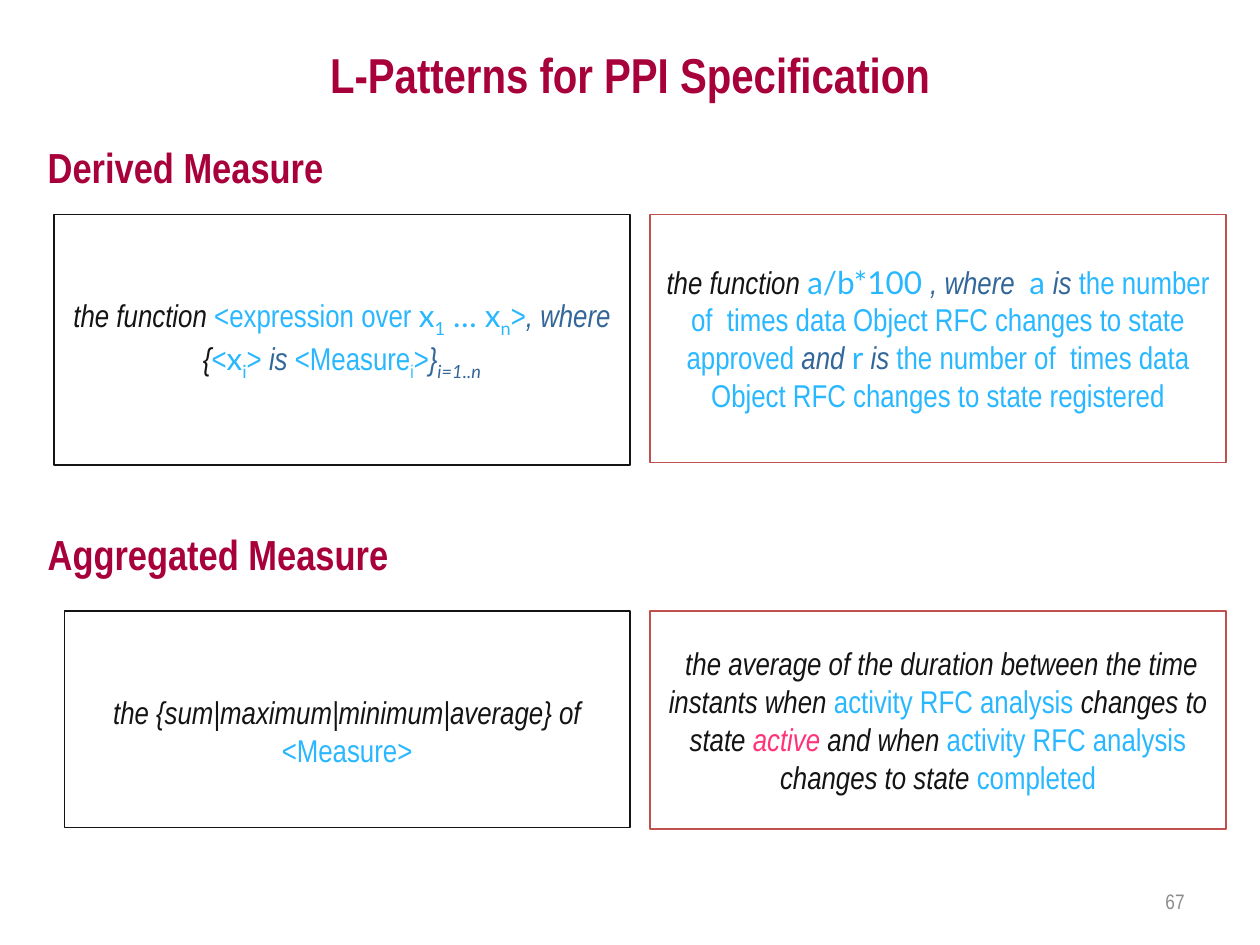
from pptx import Presentation
from pptx.dml.color import RGBColor
from pptx.enum.shapes import MSO_SHAPE as SHAPE
from pptx.enum.text import MSO_ANCHOR as ANCHOR, PP_ALIGN as ALIGN
from pptx.util import Inches, Pt

COLORS = {
    "heading": "A8003B", "ink": "141414", "value": "29B8FF", "link": "336699",
    "active": "FF327A", "frame": "C0504D", "number": "8C8C8C",
}
NARROW, LATO = "Arial Narrow", "Lato"
COLS, ROWS = 100, 75
prs = Presentation()
prs.slide_width, prs.slide_height = Inches(10), Inches(7.5)

# Run styles of the patterns
FIXED = dict(color="ink", italic=True)
LINK = dict(color="link", italic=True)
VALUE = dict(color="value")
ACTIVE = dict(color="active", italic=True)
VAR = dict(color="value", font=LATO)
VAR_SUB = dict(VAR, sub=True)
VALUE_SUB = dict(VALUE, sub=True)
RANGE_SUB = dict(LINK, font=LATO, sub=True)

DERIVED_RULE = [
    ("the function ", FIXED), ("<expression over ", VALUE), ("x", VAR),
    ("1", VAR_SUB), (" … x", VAR), ("n", VAR_SUB), (">", VALUE),
    (", where", LINK), (" {", FIXED), ("<", VALUE), ("x", VAR),
    ("i", VAR_SUB), ("> ", VALUE), ("is ", LINK), ("<Measure", VALUE),
    ("i", VALUE_SUB), (">", VALUE), ("}", LINK), ("i=1..n", RANGE_SUB),
]
COUNT = "the number of  times data Object RFC changes to state "
DERIVED_EXAMPLE = [
    ("the function ", FIXED), ("a/b*100 ", VAR), (", where  ", LINK),
    ("a ", VAR), ("is ", LINK), (COUNT + "approved ", VALUE),
    ("and ", LINK), ("r ", VAR), ("is ", LINK), (COUNT + "registered", VALUE),
]
AGGREGATED_RULE = [
    ("the {sum|maximum|minimum|average} of ", FIXED), ("<Measure>", VALUE),
]
AGGREGATED_EXAMPLE = [
    (" the average of the duration between the time instants when ", FIXED),
    ("activity RFC analysis ", VALUE), ("changes to state ", FIXED),
    ("active", ACTIVE), (" and when ", FIXED),
    ("activity RFC analysis ", VALUE), ("changes to state ", FIXED),
    ("completed", VALUE),
]


def place(box):
    """Turn a box in grid columns and rows into slide lengths."""
    x, y, w, h = box
    col, row = prs.slide_width / COLS, prs.slide_height / ROWS
    return int(x * col), int(y * row), int(w * col), int(h * row)


def add_run(p, text, size=18, color="ink", font=NARROW, bold=False,
            italic=False, sub=False):
    r = p.add_run()
    r.text = text
    f = r.font
    f.name, f.size, f.bold, f.italic = font, Pt(size), bold, italic
    f.color.rgb = RGBColor.from_string(COLORS[color])
    if sub:
        r._r.get_or_add_rPr().set("baseline", "-25000")


def add_label(s, box, text, align=ALIGN.LEFT, anchor=ANCHOR.MIDDLE, **fmt):
    tf = s.shapes.add_textbox(*place(box)).text_frame
    tf.word_wrap, tf.vertical_anchor = True, anchor
    p = tf.paragraphs[0]
    p.alignment = align
    add_run(p, text, **fmt)


def add_pattern(s, box, runs, line, top=None):
    """Add a framed pattern, centred or starting `top` rows below its edge."""
    sp = s.shapes.add_shape(SHAPE.RECTANGLE, *place(box))
    sp.shadow.inherit = False
    sp.fill.background()
    sp.line.color.rgb = RGBColor.from_string(COLORS[line])
    sp.line.width = Pt(0.75)
    tf = sp.text_frame
    tf.word_wrap = True
    tf.vertical_anchor = ANCHOR.MIDDLE if top is None else ANCHOR.TOP
    if top is not None:
        tf.margin_top = int(top * prs.slide_height / ROWS)
    p = tf.paragraphs[0]
    p.alignment = ALIGN.CENTER
    for text, style in runs:
        add_run(p, text, **style)


def add_measure(s, box, heading, rule, example, indent, drop, rule_height):
    """Heading above a rule (left) and its example (right, to the box's end)."""
    x, y, w, h = box
    add_label(s, (x, y, 0.4 * w, 5.1), heading, size=24, color="heading",
              bold=True)
    top, split = y + drop, x + 47.2
    add_pattern(s, (x + indent, top, split - x - indent, rule_height), rule,
                "ink", top=6.5)
    add_pattern(s, (split + 1.6, top, x + w - split - 1.6, h - drop), example,
                "frame")


def main():
    s = prs.slides.add_slide(prs.slide_layouts[6])
    add_label(s, (5, 3, 90, 5.7), "L-Patterns for PPI Specification",
              align=ALIGN.CENTER, size=28, color="heading", bold=True)
    add_measure(s, (2.8, 10.7, 94.5, 26), "Derived Measure", DERIVED_RULE,
                DERIVED_EXAMPLE, indent=1.5, drop=6.3, rule_height=19.9)
    add_measure(s, (2.8, 41.4, 94.5, 24.4), "Aggregated Measure",
                AGGREGATED_RULE, AGGREGATED_EXAMPLE, indent=2.3, drop=7.1,
                rule_height=17.2)
    add_label(s, (71.7, 69.5, 23.3, 4), "67", align=ALIGN.RIGHT, size=12,
              color="number")
    prs.save("out.pptx")


if __name__ == "__main__":
    main()
